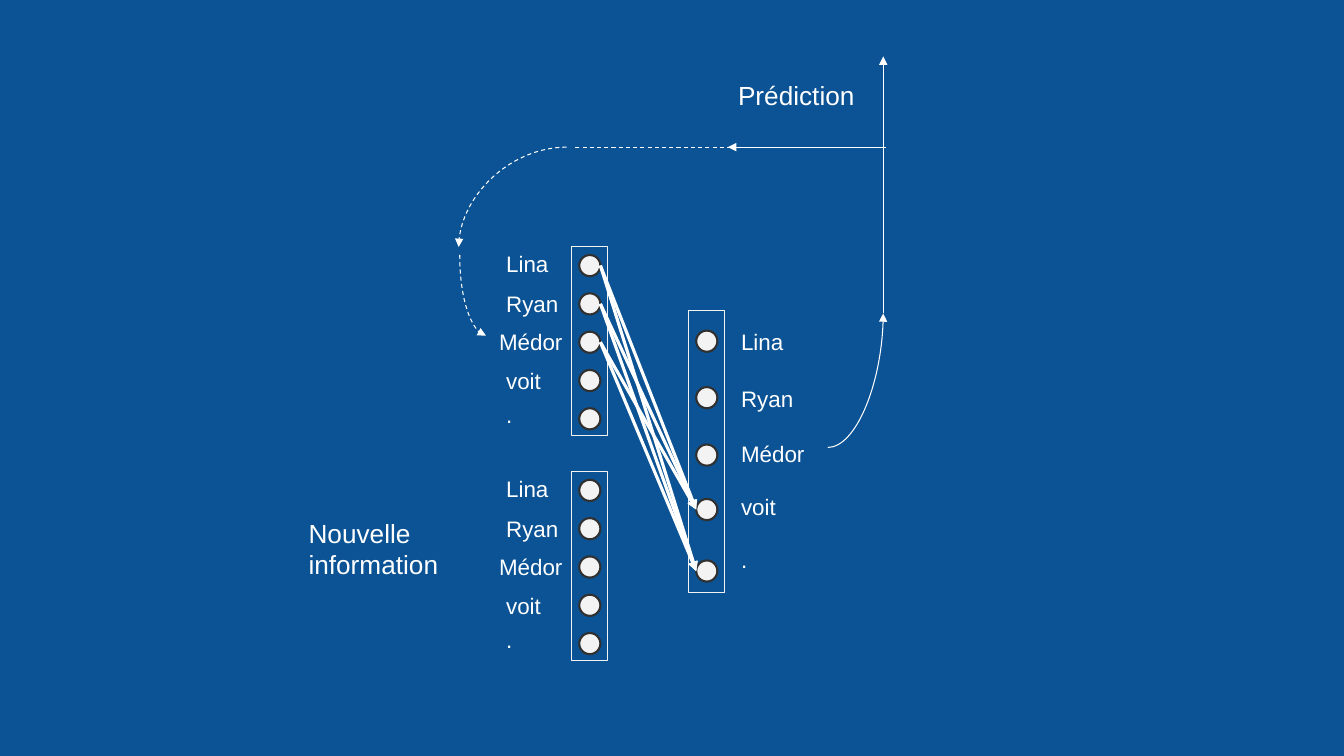
import pptx
import pptx.dml.color
import pptx.enum.dml
import pptx.enum.shapes
import pptx.oxml
import pptx.oxml.ns
import pptx.util

Inches = pptx.util.Inches
Pt = pptx.util.Pt
Color = pptx.dml.color.RGBColor
Shape = pptx.enum.shapes.MSO_SHAPE
Link = pptx.enum.shapes.MSO_CONNECTOR

BLUE = Color(0x0B, 0x53, 0x94)
WHITE = Color(0xFF, 0xFF, 0xFF)
PALE = Color(0xF3, 0xF3, 0xF3)
DARK = Color(0x30, 0x30, 0x30)

WORDS = ["Lina", "Ryan", "Médor", "voit", "."]
BOX = 0.36
DOT = 0.21
INSET = (BOX - DOT) / 2


def label(slide, left, top, width, height, text, size):
    box = slide.shapes.add_textbox(
        Inches(left), Inches(top), Inches(width), Inches(height))
    frame = box.text_frame
    frame.word_wrap = True
    frame.margin_left = frame.margin_right = Inches(0.13)
    frame.margin_top = frame.margin_bottom = Inches(0.13)
    frame.text = text
    font = frame.paragraphs[0].runs[0].font
    font.name = "Arial"
    font.size = Pt(size)
    font.color.rgb = WHITE


def outline(slide, kind, left, top, width, height, color, weight):
    shape = slide.shapes.add_shape(
        kind, Inches(left), Inches(top), Inches(width), Inches(height))
    shape.shadow.inherit = False
    shape.fill.background()
    shape.line.color.rgb = color
    shape.line.width = Pt(weight)
    return shape


def arrow(slide, start, end, weight=0.75, dash=False, head=True, bend=False, turn=0):
    """Draw a line; bend makes it a quarter curve, turn rotates it in degrees."""
    kind = Link.CURVE if bend else Link.STRAIGHT
    line = slide.shapes.add_connector(
        kind, *(Inches(value) for value in (*start, *end)))
    line.line.color.rgb = WHITE
    line.line.width = Pt(weight)
    if dash:
        line.line.dash_style = pptx.enum.dml.MSO_LINE.DASH
    props = line._element.spPr
    if head:
        tail = pptx.oxml.parse_xml(
            '<a:tailEnd %s type="triangle"/>' % pptx.oxml.ns.nsdecls("a"))
        line.line._get_or_add_ln().append(tail)
    if bend:
        props.find(pptx.oxml.ns.qn("a:prstGeom")).set("prst", "curvedConnector2")
    if turn:
        props.find(pptx.oxml.ns.qn("a:xfrm")).set("rot", str(turn * 60000))
    props.append(pptx.oxml.parse_xml(
        "<a:effectLst %s/>" % pptx.oxml.ns.nsdecls("a")))


def layer(slide, left, top, height, dots, rows, shift, nudge, wide):
    """Draw a column of neurons with its words; nudge and wide adjust Médor."""
    outline(slide, Shape.RECTANGLE, left, top, BOX, height, PALE, 0.75)
    for dot, row, word in zip(dots, rows, WORDS):
        disc = outline(slide, Shape.OVAL, left + INSET, top + dot, DOT, DOT, DARK, 1.5)
        disc.fill.solid()
        disc.fill.fore_color.rgb = PALE
        long = word == "Médor"
        label(slide, left + shift + (nudge if long else 0), top + row,
              wide if long else 0.89, 0.4, word, 16)


def weights(slide, left, tops, right, ends):
    for top in tops:
        for end in ends:
            arrow(slide, (left, top), (right, end), weight=2.25)


def loop(slide, left, top):
    """Draw the path from the predicted word back to the input."""
    def at(across, down):
        return left + across, top + down

    arrow(slide, at(3.66, 3.88), at(4.21, 2.55), bend=True)
    arrow(slide, at(4.21, 2.55), at(4.21, 0))
    arrow(slide, at(4.24, 0.9), at(2.67, 0.9))
    arrow(slide, at(3.06, 0.9), at(1.15, 0.9), dash=True, head=False)
    arrow(slide, at(1.07, 0.9), at(0, 1.89), dash=True, bend=True)
    arrow(slide, at(0.54, 2.24), at(-0.26, 2.5), dash=True, bend=True, turn=270)
    label(slide, *at(2.64, 0.1), 1.5, 0.59, "Prédiction", 18.7)


def network(slide, left, top):
    dots = [0.08 + 0.38 * i for i in range(5)]
    rows = [-0.1, 0.3, 0.68, 1.06, 1.4]
    for down in (0, 2.23):
        layer(slide, left, top + down, 1.87, dots, rows, -0.78, -0.07, 0.96)

    goal, base = left + 1.16, top + 0.63
    outs = [0.2, 0.76, 1.33, 1.87, 2.48]
    layer(slide, goal, base, 2.8, outs, [0.05, 0.61, 1.16, 1.68, 2.21], 0.39, 0, 0.99)
    weights(slide, left + INSET + DOT, [top + dot + DOT / 2 for dot in dots[:3]],
            goal + INSET, [base + out + DOT / 2 for out in outs[3:]])
    label(slide, left - 2.74, top + 2.55, 2.25, 0.74, "Nouvelle information", 18.7)


def main():
    deck = pptx.Presentation()
    deck.slide_width = Inches(13.33)
    deck.slide_height = Inches(7.5)
    slide = deck.slides.add_slide(deck.slide_layouts[6])
    slide.background.fill.solid()
    slide.background.fill.fore_color.rgb = BLUE
    loop(slide, 4.55, 0.56)
    network(slide, 5.67, 2.45)
    deck.save("out.pptx")


if __name__ == "__main__":
    main()
